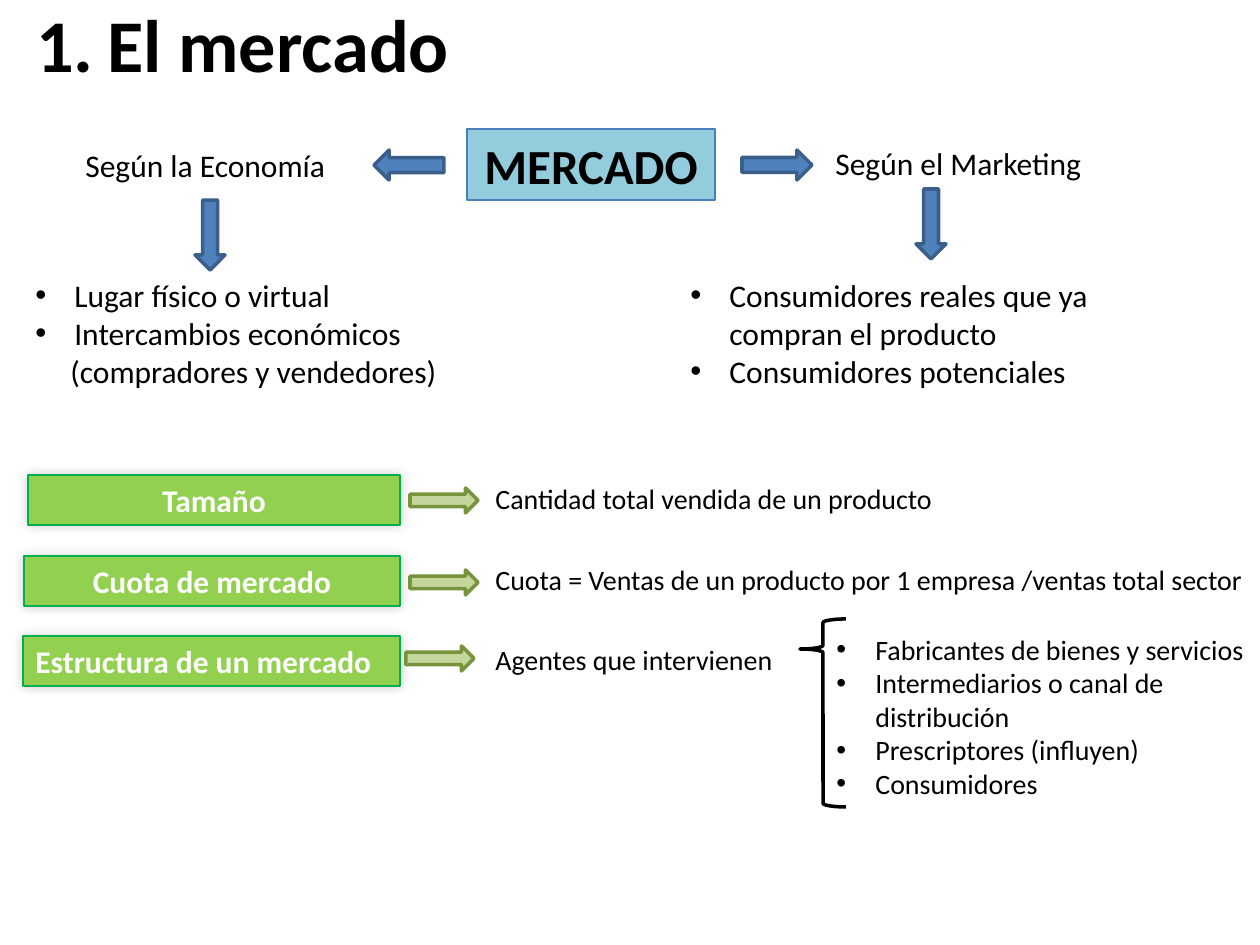
from pptx import Presentation
from pptx.dml.color import RGBColor
from pptx.enum.shapes import MSO_SHAPE
from pptx.enum.text import MSO_ANCHOR, PP_ALIGN
from pptx.oxml import parse_xml
from pptx.oxml.ns import nsdecls
from pptx.util import Pt

PX = 914400 / 126
FONT = "Calibri"
BLACK = RGBColor(0, 0, 0)
WHITE = RGBColor(255, 255, 255)
BLUE = RGBColor(0x4F, 0x81, 0xBD)
NAVY = RGBColor(0x3A, 0x5F, 0x8B)
AQUA = RGBColor(0x93, 0xCD, 0xDD)
EDGE = RGBColor(0x4B, 0x7E, 0xBC)
LIME = RGBColor(0x92, 0xD0, 0x50)
GREEN = RGBColor(0x00, 0xB0, 0x50)
SAGE = RGBColor(0xC3, 0xD6, 0x9B)
OLIVE = RGBColor(0x77, 0x93, 0x3C)

DOT = '<a:buChar {} char="•"/>'
NUM = '<a:buAutoNum {} type="arabicPeriod"/>'
HALO = ('<a:effectLst {}><a:outerShdw blurRad="76200" dist="0" dir="0">'
        '<a:srgbClr val="000000"><a:alpha val="20000"/></a:srgbClr>'
        '</a:outerShdw></a:effectLst>')

LABELS = [
    ("Según la Economía", (73, 140, 290, 50)),
    ("Según el Marketing", (823, 138, 290, 50)),
]
LISTS = [
    (["Lugar físico o virtual", "Intercambios económicos"],
     (23, 270, 645, 126), 18),
    (["Consumidores reales que ya compran el producto",
      "Consumidores potenciales"], (678, 270, 535, 126), 18),
    (["Fabricantes de bienes y servicios",
      "Intermediarios o canal de distribución",
      "Prescriptores (influyen)", "Consumidores"],
     (824, 626, 436, 213), 16),
]
ASIDE = "(compradores y vendedores)"
ARROWS = [(374, 150, 180), (742, 150, 0), (175, 220, 90), (896, 209, 90)]
ROWS = [
    ("Tamaño", PP_ALIGN.CENTER, (28, 475), (410, 488),
     "Cantidad total vendida de un producto", 533),
    ("Cuota de mercado", PP_ALIGN.CENTER, (24, 556), (410, 570),
     "Cuota = Ventas de un producto por 1 empresa /ventas total sector", 777),
    ("Estructura de un mercado", PP_ALIGN.LEFT, (23, 636), (406, 646),
     "Agentes que intervienen", 349),
]
RIGHT = 400

deck = Presentation()
deck.slide_width = round(1260 * PX)
deck.slide_height = round(945 * PX)
slide = deck.slides.add_slide(deck.slide_layouts[6])


def scale(box):
    return [round(v * PX) for v in box]


def draw(kind, box, fill, line, width=2, turn=0):
    shape = slide.shapes.add_shape(kind, *scale(box))
    shape.shadow.inherit = False
    if fill is None:
        shape.fill.background()
    else:
        shape.fill.solid()
        shape.fill.fore_color.rgb = fill
    shape.line.color.rgb = line
    shape.line.width = Pt(width)
    shape.rotation = turn
    return shape


def write(frame, text, size=18, color=BLACK, bold=False, align=PP_ALIGN.LEFT,
          mark=None, left=0, hang=0, space=None, more=False):
    frame.word_wrap = True
    para = frame.add_paragraph() if more else frame.paragraphs[0]
    para.alignment = align
    if space:
        para.line_spacing = space
    props = para._p.get_or_add_pPr()
    props.set("marL", str(round(left * PX)))
    props.set("indent", str(round(-hang * PX)))
    if mark:
        if mark == DOT:
            props.append(parse_xml(
                f'<a:buFont {nsdecls("a")} typeface="Arial"/>'))
        props.append(parse_xml(mark.format(nsdecls("a"))))
    run = para.add_run()
    run.text = text
    font = run.font
    font.name = FONT
    font.size = Pt(size)
    font.bold = bold
    font.color.rgb = color


def frame(box, anchor=MSO_ANCHOR.TOP):
    body = slide.shapes.add_textbox(*scale(box)).text_frame
    body.vertical_anchor = anchor
    return body


write(frame((24, 0, 1134, 96), MSO_ANCHOR.MIDDLE), "El mercado", size=42.5,
      bold=True, mark=NUM, left=71, hang=71, space=0.9)

core = draw(MSO_SHAPE.RECTANGLE, (467, 129, 248, 71), AQUA, EDGE, width=0)
core.text_frame.vertical_anchor = MSO_ANCHOR.TOP
write(core.text_frame, "MERCADO", size=28, bold=True, align=PP_ALIGN.CENTER)

for text, box in LABELS:
    write(frame(box), text)

for x, y, turn in ARROWS:
    draw(MSO_SHAPE.RIGHT_ARROW, (x, y, 70, 30), BLUE, NAVY, turn=turn)

for name, align, (x, y), tip, note, wide in ROWS:
    tag = draw(MSO_SHAPE.RECTANGLE, (x, y, RIGHT - x, 50), LIME, GREEN, width=0)
    props = tag._element.spPr
    props.remove(props[-1])
    props.append(parse_xml(HALO.format(nsdecls("a"))))
    tag.text_frame.vertical_anchor = MSO_ANCHOR.TOP
    write(tag.text_frame, name, color=WHITE, bold=True, align=align)
    draw(MSO_SHAPE.RIGHT_ARROW, (*tip, 68, 25), SAGE, OLIVE)
    write(frame((483, y, wide, 45)), note, size=16)

brace = draw(MSO_SHAPE.LEFT_BRACE, (800, 619, 46, 188), None, BLACK)
brace.adjustments[0] = 0.08
brace.adjustments[1] = 0.16

for items, box, size in LISTS:
    body = frame(box)
    for i, item in enumerate(items):
        write(body, item, size=size, mark=DOT, left=39, hang=39, more=i > 0)
    if items is LISTS[0][0]:
        write(body, ASIDE, left=35, more=True)

deck.save("out.pptx")
